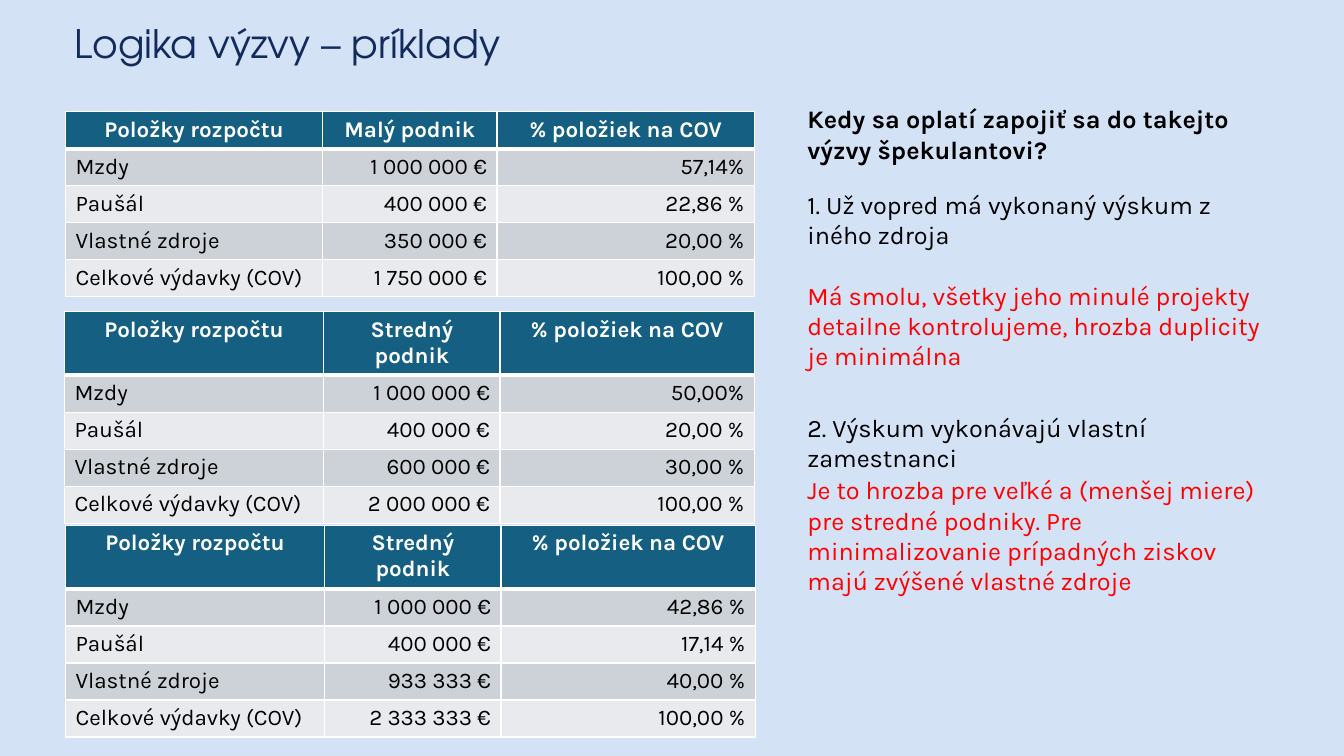
"""Build the slide with three budget tables and the commentary beside them."""
from lxml.etree import SubElement
from pptx import Presentation
from pptx.dml.color import RGBColor
from pptx.enum.text import MSO_ANCHOR, PP_ALIGN
from pptx.oxml.ns import qn
from pptx.util import Inches, Pt

SKY = RGBColor(0xD3, 0xE2, 0xF5)
NAVY = RGBColor(0x12, 0x2A, 0x5C)
TEAL = RGBColor(0x15, 0x60, 0x82)
DARK_BAND = RGBColor(0xCC, 0xD2, 0xD8)
LIGHT_BAND = RGBColor(0xE8, 0xEA, 0xED)
WHITE = RGBColor(0xFF, 0xFF, 0xFF)
BLACK = RGBColor(0, 0, 0)
RED = RGBColor(0xFF, 0, 0)

ITEMS = ["Mzdy", "Paušál", "Vlastné zdroje", "Celkové výdavky (COV)"]
ROW_HEIGHT = 0.36
BUDGETS = [
    (0.65, 1.11, 0.36, [2.55, 1.73, 2.55], "Malý podnik",
     ["1 000 000 €", "400 000 €", "350 000 €", "1 750 000 €"],
     ["57,14%", "22,86 %", "20,00 %", "100,00 %"]),
    (0.64, 3.09, 0.62, [2.57, 1.75, 2.52], "Stredný podnik",
     ["1 000 000 €", "400 000 €", "600 000 €", "2 000 000 €"],
     ["50,00%", "20,00 %", "30,00 %", "100,00 %"]),
    (0.65, 5.21, 0.62, [2.57, 1.75, 2.52], "Stredný podnik",
     ["1 000 000 €", "400 000 €", "933 333 €", "2 333 333 €"],
     ["42,86 %", "17,14 %", "40,00 %", "100,00 %"]),
]
COMMENTS = [
    (0.98, 4.83, 0.71, BLACK, True,
     "Kedy sa oplatí zapojiť sa do takejto výzvy špekulantovi?"),
    (1.83, 4.66, 0.71, BLACK, False,
     "1. Už vopred má vykonaný výskum z iného zdroja"),
    (2.73, 4.72, 1.01, RED, False,
     "Má smolu, všetky jeho minulé projekty detailne kontrolujeme, "
     "hrozba duplicity je minimálna"),
    (4.04, 4.83, 0.71, BLACK, False,
     "2. Výskum vykonávajú vlastní zamestnanci"),
    (4.66, 4.72, 1.31, RED, False,
     "Je to hrozba pre veľké a (menšej miere) pre stredné podniky. "
     "Pre minimalizovanie prípadných ziskov majú zvýšené vlastné zdroje"),
]


def write(tf, text, font, size, color, bold=False):
    tf.text = text
    tf.word_wrap = True
    p = tf.paragraphs[0]
    r = p.runs[0]
    r.font.name, r.font.size, r.font.bold = font, Pt(size), bold
    r.font.color.rgb = color
    return p


def set_borders(cell, top, bottom):
    tc_pr = cell._tc.get_or_add_tcPr()
    for side, width in (("L", 1), ("R", 1), ("T", top), ("B", bottom)):
        ln = SubElement(tc_pr, qn(f"a:ln{side}"), w=str(Pt(width)))
        fill = SubElement(ln, qn("a:solidFill"))
        SubElement(fill, qn("a:srgbClr"), val=str(WHITE))


prs = Presentation()
prs.slide_width, prs.slide_height = Inches(13.33), Inches(7.5)
s = prs.slides.add_slide(prs.slide_layouts[6])
s.background.fill.solid()
s.background.fill.fore_color.rgb = SKY

title = s.shapes.add_textbox(Inches(0.64), Inches(0.04), Inches(8.26), Inches(0.83))
title.text_frame.vertical_anchor = MSO_ANCHOR.MIDDLE
p = write(title.text_frame, "Logika výzvy – príklady", "TeX Gyre Adventor", 28, NAVY)
p.line_spacing = 0.9

for left, top, header_height, widths, company, amounts, shares in BUDGETS:
    rows = [("Položky rozpočtu", company, "% položiek na COV"),
            *zip(ITEMS, amounts, shares)]
    height = header_height + ROW_HEIGHT * len(ITEMS)
    table = s.shapes.add_table(len(rows), len(widths), Inches(left), Inches(top),
                               Inches(sum(widths)), Inches(height)).table
    for column, width in zip(table.columns, widths):
        column.width = Inches(width)
    for i, values in enumerate(rows):
        header = i == 0
        table.rows[i].height = Inches(header_height if header else ROW_HEIGHT)
        band = TEAL if header else DARK_BAND if i % 2 else LIGHT_BAND
        for j, value in enumerate(values):
            cell = table.cell(i, j)
            set_borders(cell, 3 if i == 1 else 1, 3 if header else 1)
            cell.fill.solid()
            cell.fill.fore_color.rgb = band
            p = write(cell.text_frame, value, "Karla", 16,
                      WHITE if header else BLACK, header)
            if header:
                p.alignment = PP_ALIGN.CENTER
            else:
                p.alignment = PP_ALIGN.RIGHT if j else PP_ALIGN.LEFT

for top, width, height, color, bold, text in COMMENTS:
    box = s.shapes.add_textbox(Inches(7.91), Inches(top), Inches(width), Inches(height))
    write(box.text_frame, text, "Karla", 18, color, bold)

prs.save("out.pptx")
